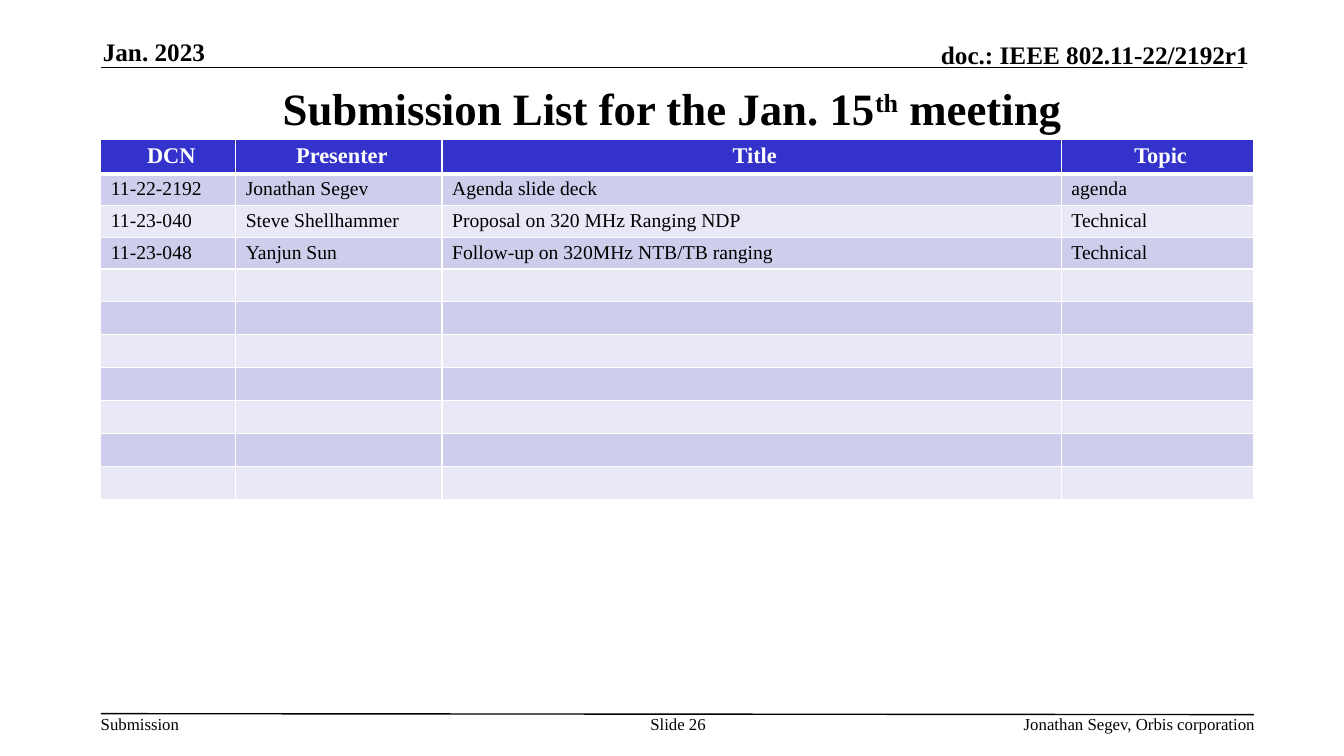
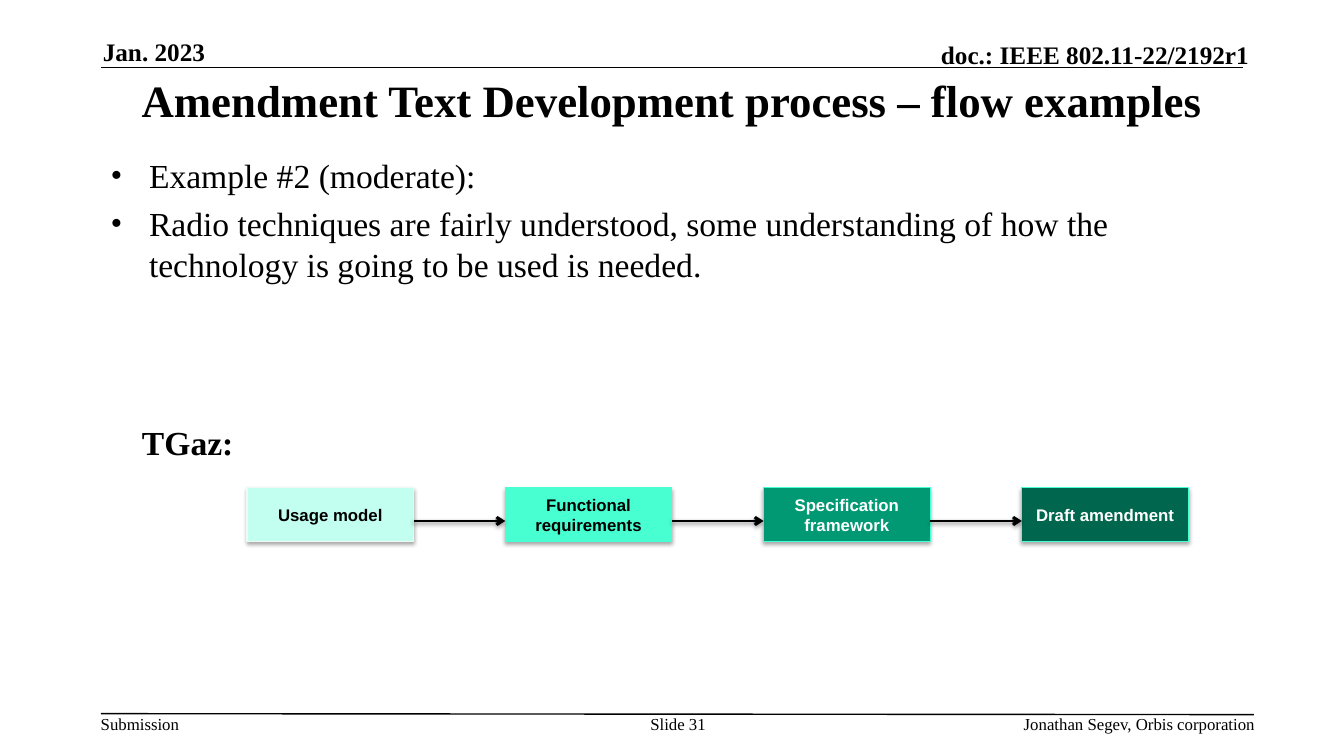
from lxml import etree
from pptx import Presentation
from pptx import util as u
from pptx.dml.color import RGBColor
from pptx.enum import shapes, text
from pptx.oxml import ns

COLORS = {
    "ink": "000000", "paper": "FFFFFF",
    "header": "3333CC", "band_dark": "CECEEC", "band_light": "E8E8F6",
    "mint": "C2FFF0", "mint_edge": "EEF9F4", "aqua": "47FFD1",
    "green": "009973", "forest": "00664D",
}
SERIF, SANS = "Times New Roman", "Arial"
ALIGN, ANCHOR = text.PP_ALIGN, text.MSO_ANCHOR
TITLE_ONLY = 5

prs = Presentation()
prs.slide_width, prs.slide_height = u.Inches(13.33), u.Inches(7.5)


# ---- helpers: every box is (left, top, width, height) in percent of the slide
def across(pct):
    return round(prs.slide_width * pct / 100)


def down(pct):
    return round(prs.slide_height * pct / 100)


def emu(box):
    left, top, width, height = box
    return across(left), down(top), across(width), down(height)


def rgb(name):
    return RGBColor.from_string(COLORS[name])


def sub(parent, tag, **attrs):
    return etree.SubElement(parent, ns.qn(tag), attrs)


def colored(parent, name):
    return sub(parent, "a:srgbClr", val=COLORS[name])


def write(tf, paragraphs, size=12, font=SERIF, color="ink", bold=False,
          align=ALIGN.LEFT, anchor=ANCHOR.TOP, margins=(0.1, 0.05), wrap=True,
          bullet=False, gap=0):
    """Fill a text frame; a paragraph is a string or a list of (text, baseline)."""
    tf.auto_size = text.MSO_AUTO_SIZE.NONE
    tf.word_wrap, tf.vertical_anchor = wrap, anchor
    tf.margin_left = tf.margin_right = u.Inches(margins[0])
    tf.margin_top = tf.margin_bottom = u.Inches(margins[1])
    for i, runs in enumerate(paragraphs):
        p = tf.add_paragraph() if i else tf.paragraphs[0]
        p.alignment = align
        if bullet:
            add_bullet(p)
        if i:
            p.space_before = u.Pt(gap)
        for words, baseline in [(runs, 0)] if isinstance(runs, str) else runs:
            r = p.add_run()
            r.text = words
            r.font.size, r.font.name, r.font.bold = u.Pt(size), font, bold
            r.font.color.rgb = rgb(color)
            if baseline:
                r._r.get_or_add_rPr().set("baseline", str(baseline * 1000))


def add_bullet(p, indent=0.38):
    pPr = p._p.get_or_add_pPr()
    pPr.set("marL", str(u.Inches(indent)))
    pPr.set("indent", str(-u.Inches(indent)))
    colored(sub(pPr, "a:buClr"), "ink")
    sub(pPr, "a:buFont", typeface=SERIF)
    sub(pPr, "a:buChar", char="•")


def add_text(s, box, paragraphs, **fmt):
    write(s.shapes.add_textbox(*emu(box)).text_frame, paragraphs, **fmt)


def set_shadow(sp, alpha=0, distance=1.8):
    """Replace the theme shadow by a soft one below, or by none."""
    effects = sub(sp._element.spPr, "a:effectLst")
    if alpha:
        shadow = sub(effects, "a:outerShdw", blurRad=str(u.Pt(3.1)),
                     dist=str(u.Pt(distance)), dir="5400000", rotWithShape="0")
        sub(colored(shadow, "ink"), "a:alpha", val=str(alpha * 1000))


def add_line(s, x1, y1, x2, y2, width=1, arrow=False):
    line = s.shapes.add_connector(shapes.MSO_CONNECTOR.STRAIGHT,
                                  across(x1), down(y1), across(x2), down(y2))
    line.line.color.rgb, line.line.width = rgb("ink"), u.Pt(width)
    if arrow:
        sub(line.line._get_or_add_ln(), "a:tailEnd", type="arrow")
    set_shadow(line, 38 if arrow else 0, 1.6)


# ---- shared frame: header, footer and title
def add_page(title, number, title_height):
    s = prs.slides.add_slide(prs.slide_layouts[TITLE_ONLY])
    head = dict(size=18, bold=True, anchor=ANCHOR.BOTTOM, margins=(0, 0))
    foot = dict(margins=(0, 0))
    add_line(s, 7.5, 8.93, 92.5, 8.93)
    add_text(s, (7.65, 4.8, 20.5, 4), ["Jan. 2023"], **head)
    add_text(s, (54.68, 5.2, 38.25, 4), ["doc.: IEEE 802.11-22/2192r1"],
             align=ALIGN.RIGHT, **head)
    add_line(s, 7.5, 94.4, 93.3, 94.53)
    add_text(s, (7.5, 94.4, 5.93, 2.67), ["Submission"], wrap=False, **foot)
    add_text(s, (47.55, 94.4, 5.8, 5.33), [f"Slide {number}"],
             align=ALIGN.CENTER, **foot)
    add_text(s, (58.58, 94.4, 34.8, 2.67), ["Jonathan Segev, Orbis corporation"],
             align=ALIGN.RIGHT, **foot)
    sp = s.shapes.title
    sp.left, sp.top, sp.width, sp.height = emu((7.5, 10, 85, title_height))
    write(sp.text_frame, [title], size=32, bold=True, align=ALIGN.CENTER,
          anchor=ANCHOR.MIDDLE)
    return s


# ---- submission table
def set_borders(cell, bottom):
    tcPr = cell._tc.get_or_add_tcPr()
    for i, side in enumerate("LRTB"):
        width = u.Pt(bottom if side == "B" else 1)
        ln = etree.Element(ns.qn(f"a:ln{side}"), w=str(width))
        colored(sub(ln, "a:solidFill"), "paper")
        tcPr.insert(i, ln)


def fill_cell(cell, words, is_header, band):
    cell.fill.solid()
    cell.fill.fore_color.rgb = rgb(band)
    cell.margin_top = cell.margin_bottom = u.Inches(0.045)
    cell.margin_left = u.Inches(0.1)
    cell.margin_right = u.Inches(0.04 if is_header else 0.1)
    set_borders(cell, 3 if is_header else 1)
    p = cell.text_frame.paragraphs[0]
    if not words:
        sub(p._p, "a:endParaRPr", sz="1400")
        return
    r = p.add_run()
    r.text = words
    p.alignment = ALIGN.CENTER if is_header else ALIGN.LEFT
    r.font.name, r.font.bold = SERIF, is_header
    r.font.size = u.Pt(16 if is_header else 14)
    r.font.color.rgb = rgb("paper" if is_header else "ink")


def add_submissions(s, box, shares, rows, row_count):
    frame = s.shapes.add_table(row_count, len(shares), *emu(box))
    table = frame.table
    table.horz_banding = False
    for column, share in zip(table.columns, shares):
        column.width = round(across(box[2]) * share / 100)
    # The header is 1.1 times as high as a body row
    unit = down(box[3]) / (row_count + 0.1)
    for i, row in enumerate(table.rows):
        row.height = round(unit * (1 if i else 1.1))
        band = ("band_dark" if i % 2 else "band_light") if i else "header"
        words = rows[i] if i < len(rows) else [""] * len(shares)
        for cell, word in zip(row.cells, words):
            fill_cell(cell, word, i == 0, band)


# ---- process flow
def add_flow(s, box, steps):
    left, top, width, height = box
    gap = 0.55  # as a share of a step's width
    step_w = width / (len(steps) + gap * (len(steps) - 1))
    arrow_y = top + height * 0.62
    for i, (label, fill, edge, ink) in enumerate(steps):
        x = left + i * step_w * (1 + gap)
        sp = s.shapes.add_shape(shapes.MSO_SHAPE.RECTANGLE,
                                *emu((x, top, step_w, height)))
        sp.fill.solid()
        sp.fill.fore_color.rgb = rgb(fill)
        sp.line.color.rgb, sp.line.width = rgb(edge), u.Pt(0.75)
        set_shadow(sp, 35)
        write(sp.text_frame, [label], font=SANS, color=ink, bold=True,
              align=ALIGN.CENTER, anchor=ANCHOR.MIDDLE)
        if i:
            add_line(s, x - gap * step_w, arrow_y, x, arrow_y, 2, arrow=True)


# ---- slides
def submission_slide():
    title = [("Submission List for the Jan. 15", 0), ("th", 30), (" meeting", 0)]
    s = add_page(title, 26, 8.53)
    rows = [
        ("DCN", "Presenter", "Title", "Topic"),
        ("11-22-2192", "Jonathan Segev", "Agenda slide deck", "agenda"),
        ("11-23-040", "Steve Shellhammer", "Proposal on 320 MHz Ranging NDP",
         "Technical"),
        ("11-23-048", "Yanjun Sun", "Follow-up on 320MHz NTB/TB ranging",
         "Technical"),
    ]
    add_submissions(s, (7.5, 18.4, 85.8, 46.5), (11.7, 17.9, 53.7, 16.7), rows, 11)


def process_slide():
    s = add_page("Amendment Text Development process – flow examples", 31, 6.4)
    add_text(s, (7.5, 19.8, 85, 25), [
        "Example #2 (moderate):",
        "Radio techniques are fairly understood, some understanding of how the "
        "technology is going to be used is needed.",
    ], size=24, bullet=True, gap=6)
    add_text(s, (9.83, 55.2, 17.1, 6.67), ["TGaz:"], size=24, bold=True)
    add_flow(s, (18.38, 64.53, 70.05, 7.07), [
        ("Usage model", "mint", "mint_edge", "ink"),
        ("Functional requirements", "aqua", "aqua", "ink"),
        ("Specification framework", "green", "aqua", "paper"),
        ("Draft amendment", "forest", "aqua", "paper"),
    ])


def main():
    submission_slide()
    process_slide()
    prs.save("out.pptx")


if __name__ == "__main__":
    main()
